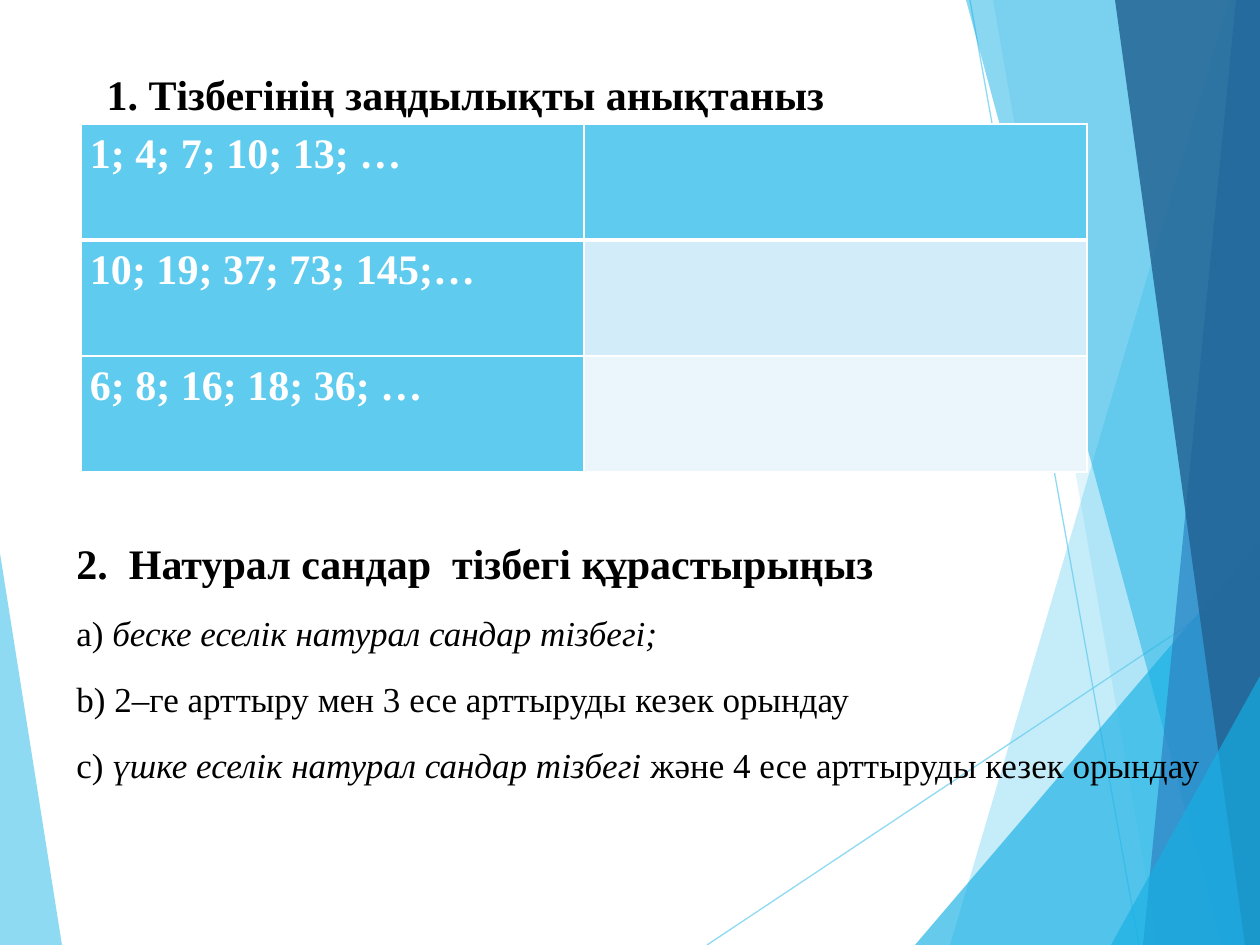
import pptx
import pptx.util
import pptx.dml.color
import pptx.enum.shapes
import pptx.enum.text
import pptx.oxml
import pptx.oxml.ns

PX = 914400 / 126
WIDTH, HEIGHT = 1260, 945
FONT = "Times New Roman"
COLORS = {
    "sky": "5FCBEF", "cyan": "17B0E4", "blue": "2E83C3", "navy": "226292",
    "pale": "D2ECF9", "paler": "EAF6FC", "white": "FFFFFF", "black": "000000",
}

# Content
TITLE = "1. Тізбегінің заңдылықты анықтаныз"
SEQUENCES = [
    ("1; 4; 7; 10; 13; …", "sky"),
    ("10; 19; 37; 73; 145;…", "pale"),
    ("6; 8; 16; 18; 36; …", "paler"),
]
HEADING = {"size": 24, "bold": True}
PLAIN = {"size": 20, "bold": False, "italic": False}
ITALIC = {"size": 20, "bold": False, "italic": True}
TASKS = [
    [("2.  Натурал сандар  тізбегі құрастырыңыз", HEADING)],
    [("а) ", PLAIN), ("беске еселік натурал сандар тізбегі;", ITALIC)],
    [("b) 2–ге арттыру мен 3 есе арттыруды кезек орындау", PLAIN)],
    [("c) ", PLAIN), ("үшке еселік натурал сандар тізбегі", ITALIC),
     (" және 4 есе арттыруды кезек орындау", PLAIN)],
]

# Decoration: colour, opacity in percent, corners in px
LEFT_WEDGE = ("sky", 70, [(0, 553), (62, 945), (0, 945)])
RAYS = [((707, 945), (1260, 577)), ((970, 0), (1139, 945))]
RIGHT_FACETS = [
    ("sky", 36, [(1229, 0), (950, 945), (1260, 945), (1260, 0)]),
    ("sky", 20, [(993, 0), (1158, 945), (1260, 945), (1260, 0)]),
    ("cyan", 66, [(915, 945), (1260, 541), (1260, 945)]),
    ("cyan", 50, [(966, 0), (1222, 945), (1260, 945), (1260, 0)]),
    ("blue", 70, [(1236, 0), (1143, 945), (1260, 945), (1260, 0)]),
    ("navy", 82, [(1115, 0), (1245, 945), (1260, 945), (1260, 0)]),
    ("cyan", 66, [(1111, 945), (1260, 676), (1260, 945)]),
]


def px(value):
    return round(value * PX)


def rgb(name):
    return pptx.dml.color.RGBColor.from_string(COLORS[name])


def set_all(target, values):
    for name, value in values.items():
        setattr(target, name, value)


def place(box, left, top, width, height):
    set_all(box, {"left": px(left), "top": px(top),
                  "width": px(width), "height": px(height)})


def set_opacity(shape, percent):
    for color in shape._element.spPr.iter(pptx.oxml.ns.qn("a:srgbClr")):
        alpha = pptx.oxml.parse_xml(
            f'<a:alpha {pptx.oxml.ns.nsdecls("a")} val="{percent * 1000}"/>')
        color.append(alpha)


def add_facet(page, color, opacity, corners):
    builder = page.shapes.build_freeform(*corners[0], scale=PX)
    builder.add_line_segments(corners[1:], close=True)
    facet = builder.convert_to_shape()
    facet.shadow.inherit = False
    facet.line.fill.background()
    facet.fill.solid()
    facet.fill.fore_color.rgb = rgb(color)
    set_opacity(facet, opacity)


def add_ray(page, start, end):
    ray = page.shapes.add_connector(
        pptx.enum.shapes.MSO_CONNECTOR.STRAIGHT, *map(px, start + end))
    ray.line.color.rgb = rgb("sky")
    ray.line.width = pptx.util.Pt(0.75)
    set_opacity(ray, 70)
    ray._element.spPr.append(pptx.oxml.parse_xml(
        f'<a:effectLst {pptx.oxml.ns.nsdecls("a")}/>'))


def write(para, spans, color="black", space_after=10):
    set_all(para, {"alignment": pptx.enum.text.PP_ALIGN.LEFT, "line_spacing": 1.15,
                   "space_after": pptx.util.Pt(space_after)})
    for text, style in spans:
        span = para.add_run()
        span.text = text
        set_all(span.font, {**style, "name": FONT, "size": pptx.util.Pt(style["size"])})
        span.font.color.rgb = rgb(color)


def set_frame(frame):
    set_all(frame, {"word_wrap": True,
                    "auto_size": pptx.enum.text.MSO_AUTO_SIZE.NONE,
                    "vertical_anchor": pptx.enum.text.MSO_ANCHOR.TOP})


def format_cell(cell, fill, top_width, bottom_width):
    cell.fill.solid()
    cell.fill.fore_color.rgb = rgb(fill)
    set_all(cell, {"margin_left": px(9), "margin_right": px(9),
                   "margin_top": 0, "margin_bottom": 0})
    properties = cell._tc.get_or_add_tcPr()
    widths = {"lnL": 1, "lnR": 1, "lnT": top_width, "lnB": bottom_width}
    for position, (side, width) in enumerate(widths.items()):
        properties.insert(position, pptx.oxml.parse_xml(
            f'<a:{side} {pptx.oxml.ns.nsdecls("a")} w="{width * 12700}"><a:solidFill>'
            f'<a:srgbClr val="{COLORS["white"]}"/></a:solidFill></a:{side}>'))


def add_sequences(page):
    left, top, column, row_height = 81, 124, 503, 116
    table = page.shapes.add_table(
        len(SEQUENCES), 2, px(left), px(top),
        px(2 * column), px(row_height * len(SEQUENCES))).table
    for index, (text, answer_fill) in enumerate(SEQUENCES):
        table.rows[index].height = px(row_height)
        for cell, fill in zip(table.rows[index].cells, ("sky", answer_fill)):
            format_cell(cell, fill, 3 if index == 1 else 1, 3 if index == 0 else 1)
        write(table.cell(index, 0).text_frame.paragraphs[0],
              [(text, HEADING)], "white", 0)


def main():
    deck = pptx.Presentation()
    set_all(deck, {"slide_width": px(WIDTH), "slide_height": px(HEIGHT)})
    page = deck.slides.add_slide(deck.slide_layouts[5])

    # Background decoration
    add_facet(page, *LEFT_WEDGE)
    for ray in RAYS:
        add_ray(page, *ray)
    for facet in RIGHT_FACETS:
        add_facet(page, *facet)

    # Title
    title = page.shapes.title
    place(title, 94, 55, 804, 68)
    set_frame(title.text_frame)
    write(title.text_frame.paragraphs[0], [(TITLE, HEADING)])

    # Table of sequences
    add_sequences(page)

    # Second task
    box = page.shapes.add_textbox(0, 0, 0, 0)
    place(box, 64, 524, 1164, 271)
    frame = box.text_frame
    set_frame(frame)
    for index, spans in enumerate(TASKS):
        write(frame.add_paragraph() if index else frame.paragraphs[0], spans)

    deck.save("out.pptx")


if __name__ == "__main__":
    main()
